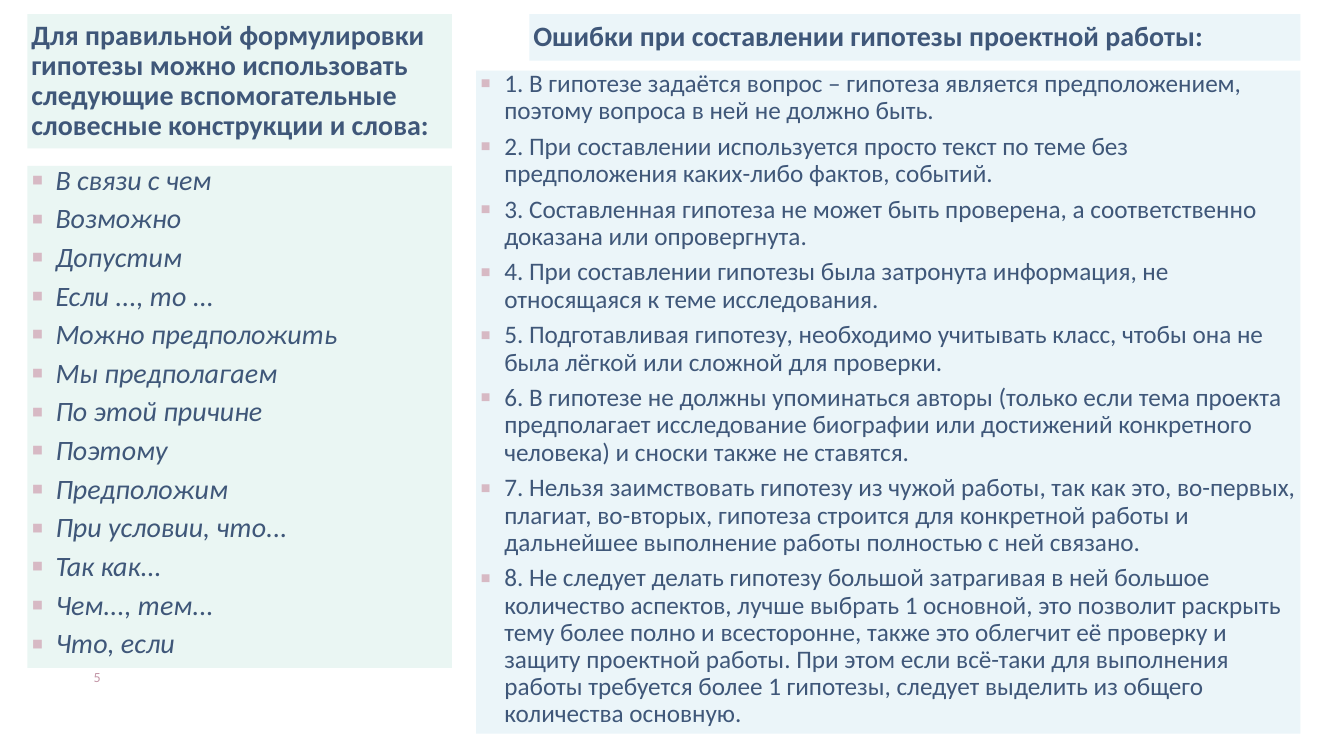
from dataclasses import dataclass

from lxml.etree import SubElement
from pptx import Presentation
from pptx.dml.color import RGBColor
from pptx.enum.shapes import MSO_SHAPE
from pptx.enum.text import MSO_ANCHOR, PP_ALIGN
from pptx.oxml.ns import qn
from pptx.util import Cm, Pt


@dataclass(frozen=True)
class Theme:
    font: str = "Calibri"
    ink: str = "3F5779"
    mint: str = "EAF6F3"
    sky: str = "EBF5F9"
    mark: str = "D7B9C4"
    rose: str = "C396A7"
    head: int = 20
    body: int = 18
    note: int = 10
    gap: int = 6
    lead: float = 0.9


WORDS = [
    "В связи с чем",
    "Возможно",
    "Допустим",
    "Если ..., то ...",
    "Можно предположить",
    "Мы предполагаем",
    "По этой причине",
    "Поэтому",
    "Предположим",
    "При условии, что...",
    "Так как...",
    "Чем..., тем...",
    "Что, если",
]

FAULTS = [
    "В гипотезе задаётся вопрос – гипотеза является предположением, поэтому вопроса в ней не должно быть.",
    "При составлении используется просто текст по теме без предположения каких-либо фактов, событий.",
    "Составленная гипотеза не может быть проверена, а соответственно доказана или опровергнута.",
    "При составлении гипотезы была затронута информация, не относящаяся к теме исследования.",
    "Подготавливая гипотезу, необходимо учитывать класс, чтобы она не была лёгкой или сложной для проверки.",
    "В гипотезе не должны упоминаться авторы (только если тема проекта предполагает исследование биографии "
    "или достижений конкретного человека) и сноски также не ставятся.",
    "Нельзя заимствовать гипотезу из чужой работы, так как это, во-первых, плагиат, во-вторых, гипотеза "
    "строится для конкретной работы и дальнейшее выполнение работы полностью с ней связано.",
    "Не следует делать гипотезу большой затрагивая в ней большое количество аспектов, лучше выбрать "
    "1 основной, это позволит раскрыть тему более полно и всесторонне, также это облегчит её проверку "
    "и защиту проектной работы. При этом если всё-таки для выполнения работы требуется более 1 гипотезы, "
    "следует выделить из общего количества основную.",
]


def add_mark(para, color):
    props = para._p.get_or_add_pPr()
    props.set("marL", str(Cm(0.61)))
    props.set("indent", str(Cm(-0.61)))
    tint = SubElement(props, qn("a:buClr"))
    SubElement(tint, qn("a:srgbClr"), val=color)
    SubElement(props, qn("a:buSzPct"), val="125000")
    SubElement(props, qn("a:buFont"), typeface="Arial")
    SubElement(props, qn("a:buChar"), char="▪")


def put_text(para, text, *, font, size, color, bold=False, italic=False,
             align=PP_ALIGN.LEFT, lead=None, gap=0, mark=None):
    para.alignment = align
    para.line_spacing = lead
    para.space_before = Pt(gap)
    if mark:
        add_mark(para, mark)
    run = para.add_run()
    run.text = text
    face = run.font
    face.name, face.size = font, Pt(size)
    face.bold, face.italic = bold, italic
    face.color.rgb = RGBColor.from_string(color)


class Page:
    def __init__(self, slide, theme):
        self.slide = slide
        self.theme = theme

    def frame(self, shape, inset, anchor):
        frame = shape.text_frame
        frame.word_wrap = True
        frame.vertical_anchor = anchor
        frame.margin_left = Cm(inset)
        frame.margin_top = frame.margin_right = frame.margin_bottom = 0
        return frame

    def panel(self, area, fill, anchor):
        shape = self.slide.shapes.add_shape(MSO_SHAPE.RECTANGLE, *map(Cm, area))
        shape.shadow.inherit = False
        shape.fill.solid()
        shape.fill.fore_color.rgb = RGBColor.from_string(fill)
        shape.line.fill.background()
        return self.frame(shape, 0.1, anchor)

    def title(self, text, area, fill):
        look = self.theme
        frame = self.panel(area, fill, MSO_ANCHOR.MIDDLE)
        put_text(frame.paragraphs[0], text, font=look.font, size=look.head,
                 color=look.ink, bold=True, lead=look.lead)

    def points(self, items, area, fill, size, italic=False):
        look = self.theme
        frame = self.panel(area, fill, MSO_ANCHOR.TOP)
        for rank, item in enumerate(items):
            para = frame.add_paragraph() if rank else frame.paragraphs[0]
            put_text(para, item, font=look.font, size=size, color=look.ink,
                     italic=italic, lead=look.lead, gap=look.gap if rank else 0,
                     mark=look.mark)

    def number(self, text, area):
        look = self.theme
        box = self.slide.shapes.add_textbox(*map(Cm, area))
        frame = self.frame(box, 0.25, MSO_ANCHOR.TOP)
        put_text(frame.paragraphs[0], text, font=look.font, size=look.note,
                 color=look.rose, align=PP_ALIGN.CENTER)


def main():
    deck = Presentation()
    deck.slide_width, deck.slide_height = Cm(33.87), Cm(19.05)
    look = Theme()
    page = Page(deck.slides.add_slide(deck.slide_layouts[6]), look)

    page.title("Для правильной формулировки гипотезы можно использовать следующие "
               "вспомогательные словесные конструкции и слова:",
               (0.69, 0.36, 10.7, 3.38), look.mint)
    page.points(WORDS, (0.69, 4.18, 10.7, 12.65), look.mint, look.head, italic=True)
    page.number("5", (1.78, 16.84, 1.09, 0.66))
    page.title("Ошибки при составлении гипотезы проектной работы:",
               (13.34, 0.36, 19.43, 1.17), look.sky)
    faults = [f"{rank}. {fault}" for rank, fault in enumerate(FAULTS, 1)]
    page.points(faults, (12, 1.78, 20.77, 16.71), look.sky, look.body)

    deck.save("out.pptx")


if __name__ == "__main__":
    main()
